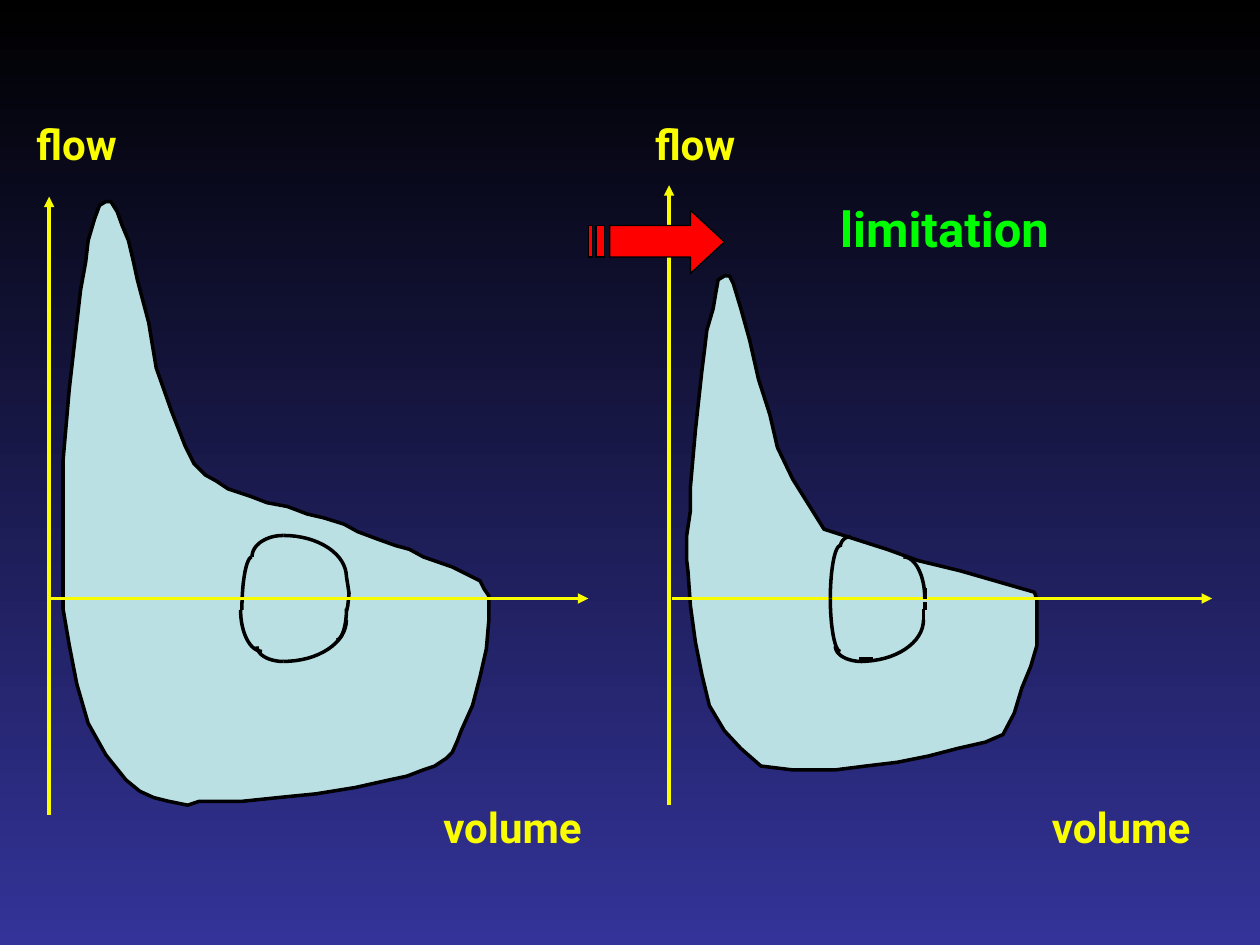
from math import cos, pi, sin

from lxml import etree
from pptx import Presentation
from pptx.dml.color import RGBColor
from pptx.enum.shapes import MSO_CONNECTOR
from pptx.enum.text import MSO_AUTO_SIZE
from pptx.oxml.ns import qn
from pptx.util import Inches, Pt

STRAIGHT = MSO_CONNECTOR.STRAIGHT
FIT_SHAPE = MSO_AUTO_SIZE.SHAPE_TO_FIT_TEXT
COLORS = {
    "sky_top": "000000",
    "sky_bottom": "333399",
    "axis": "FAFD00",
    "limitation": "00FF00",
    "loop": "BBE0E3",
    "outline": "000000",
    "arrow": "FF0000",
}
ARC_STEPS = 16

LIMITED_LOOP = [
    (5.46, 4.53), (5.45, 4.45), (5.45, 4.25), (5.48, 4.05), (5.48, 3.86),
    (5.52, 3.41), (5.57, 2.95), (5.59, 2.79), (5.61, 2.62), (5.66, 2.45),
    (5.68, 2.33), (5.7, 2.22), (5.75, 2.19), (5.79, 2.19), (5.82, 2.25),
    (5.88, 2.45), (5.95, 2.7), (6.02, 3.01), (6.11, 3.29), (6.17, 3.55),
    (6.29, 3.8), (6.54, 4.2), (6.79, 4.28), (7.04, 4.36), (7.29, 4.45),
    (7.62, 4.53), (8.21, 4.7), (8.23, 4.76), (8.23, 5.12), (8.18, 5.29),
    (8.11, 5.46), (8.05, 5.66), (7.96, 5.83), (7.82, 5.89), (7.6, 5.94),
    (7.37, 6), (7.12, 6.05), (6.87, 6.08), (6.63, 6.11), (6.29, 6.11),
    (6.04, 6.08), (5.88, 5.94), (5.75, 5.8), (5.63, 5.6), (5.57, 5.35),
    (5.52, 5.1), (5.48, 4.81), (5.46, 4.53),
]
NORMAL_LOOP = [
    (0.5, 4.67), (0.5, 3.66), (0.55, 3.09), (0.61, 2.56), (0.64, 2.3),
    (0.68, 2.08), (0.7, 1.91), (0.75, 1.74), (0.79, 1.63), (0.84, 1.6),
    (0.88, 1.6), (0.93, 1.68), (0.97, 1.79), (1.02, 1.91), (1.06, 2.08),
    (1.09, 2.22), (1.18, 2.56), (1.24, 2.92), (1.36, 3.26), (1.47, 3.54),
    (1.54, 3.68), (1.63, 3.77), (1.72, 3.82), (1.81, 3.88), (1.9, 3.91),
    (1.99, 3.94), (2.12, 3.99), (2.28, 4.02), (2.44, 4.08), (2.57, 4.11),
    (2.73, 4.16), (2.84, 4.22), (3, 4.28), (3.14, 4.33), (3.25, 4.36),
    (3.36, 4.42), (3.59, 4.5), (3.81, 4.61), (3.84, 4.67), (3.88, 4.73),
    (3.88, 4.92), (3.86, 5.15), (3.81, 5.37), (3.75, 5.6), (3.66, 5.8),
    (3.63, 5.88), (3.59, 5.97), (3.54, 6.02), (3.45, 6.08), (3.36, 6.11),
    (3.23, 6.16), (3.09, 6.19), (2.82, 6.25), (2.51, 6.3), (2.21, 6.33),
    (1.92, 6.36), (1.58, 6.36), (1.49, 6.39), (1.34, 6.36), (1.22, 6.33),
    (1.11, 6.28), (1, 6.19), (0.84, 5.99), (0.7, 5.74), (0.61, 5.43),
    (0.55, 5.12), (0.5, 4.83), (0.5, 4.67),
]
TIDAL_ARCS = [
    (7.17, 4.75, 0.17, -0.33), (6.75, 4.34, -0.08, -0.08),
    (6.67, 4.75, -0.08, 0.42), (6.83, 4.92, 0.5, 0.33),
    (6.67, 4.75, -0.08, -0.42), (6.84, 5.13, -0.21, 0.12),
    (2.25, 4.92, 0.5, 0.33), (2.25, 4.58, 0.5, -0.33),
    (2.25, 4.42, -0.25, -0.17), (2, 4.84, -0.08, -0.42),
    (2.08, 4.84, -0.17, 0.33), (2.25, 5.13, -0.21, 0.12),
    (2.67, 4.83, 0.08, 0.25),
]
TIDAL_LINES = [
    ((7.34, 4.78), (7.34, 4.84)),
    ((6.93, 5.23), (6.82, 5.23)),
    ((7.34, 4.67), (7.34, 4.75)),
    ((7.33, 4.83), (7.33, 4.92)),
]
TIDAL_EDGE = [(2.75, 4.58), (2.76, 4.64), (2.77, 4.71), (2.76, 4.81), (2.75, 4.85)]
ARROW_HEAD = [
    (5.48, 1.67), (5.48, 1.79), (4.84, 1.79), (4.84, 2.04),
    (5.48, 2.04), (5.48, 2.17), (5.75, 1.92),
]
ARROW_STRIPES = [
    [(left, 1.79), (left, 2.04), (right, 2.04), (right, 1.79)]
    for left, right in [(4.73, 4.8), (4.67, 4.7)]
]
LABELS = [
    ("flow", 0.19, 0.94, 0.88, 0.47, 24, "axis"),
    ("volume", 8.25, 6.36, 1.36, 0.47, 24, "axis"),
    ("volume", 3.42, 6.36, 1.36, 0.47, 24, "axis"),
    ("flow", 5.1, 0.94, 0.88, 0.47, 24, "axis"),
    ("limitation", 6.57, 1.58, 1.95, 0.53, 28, "limitation"),
]


def rgb(name):
    return RGBColor.from_string(COLORS[name])


def to_emu(points):
    return [(Inches(x), Inches(y)) for x, y in points]


def apply_format(target, values):
    for name, value in values.items():
        setattr(target, name, value)


class FlowVolumeSlide:
    font = "Roboto"
    line_width = 2

    def __init__(self, presentation):
        self.slide = presentation.slides.add_slide(presentation.slide_layouts[6])
        self.shapes = self.slide.shapes

    def background(self, *color_names):
        fill = self.slide.background.fill
        fill.gradient()
        fill.gradient_angle = 270
        for stop, position, name in zip(fill.gradient_stops, (0, 1), color_names):
            stop.position = position
            stop.color.rgb = rgb(name)

    def outline(self, contours, fill=None, closed=True, width=line_width):
        first, *others = map(to_emu, contours)
        builder = self.shapes.build_freeform(*first[0], scale=1.0)
        builder.add_line_segments(first[1:], close=closed)
        for contour in others:
            builder.move_to(*contour[0])
            builder.add_line_segments(contour[1:], close=closed)
        shape = builder.convert_to_shape()
        shape.shadow.inherit = False
        if fill:
            shape.fill.solid()
            shape.fill.fore_color.rgb = rgb(fill)
        else:
            shape.fill.background()
        shape.line.color.rgb = rgb("outline")
        shape.line.width = Pt(width)

    def quarter_arc(self, center_x, center_y, reach_x, reach_y):
        angles = [step * pi / 2 / ARC_STEPS for step in range(ARC_STEPS + 1)]
        points = [
            (center_x + reach_x * cos(angle), center_y + reach_y * sin(angle))
            for angle in angles
        ]
        self.outline([points], closed=False)

    def line(self, begin, end, color="outline", arrowhead=None):
        (begin_x, begin_y), (end_x, end_y) = to_emu([begin, end])
        connector = self.shapes.add_connector(STRAIGHT, begin_x, begin_y, end_x, end_y)
        connector.line.color.rgb = rgb(color)
        connector.line.width = Pt(self.line_width)
        properties = connector._element.spPr
        if arrowhead:
            line_element = properties.find(qn("a:ln"))
            etree.SubElement(line_element, qn(f"a:{arrowhead}"), type="triangle")
        etree.SubElement(properties, qn("a:effectLst"))

    def label(self, text, left, top, width, height, size, color):
        box = self.shapes.add_textbox(*map(Inches, (left, top, width, height)))
        apply_format(box.text_frame, {"word_wrap": False, "auto_size": FIT_SHAPE})
        paragraph = box.text_frame.paragraphs[0]
        paragraph.line_spacing = 0.9
        run = paragraph.add_run()
        run.text = text
        apply_format(run.font, {"name": self.font, "size": Pt(size), "bold": True})
        run.font.color.rgb = rgb(color)


def main():
    presentation = Presentation()
    presentation.slide_width = Inches(10)
    presentation.slide_height = Inches(7.5)
    page = FlowVolumeSlide(presentation)
    page.background("sky_top", "sky_bottom")
    page.outline([LIMITED_LOOP], fill="loop")
    page.line((5.31, 1.47), (5.31, 6.39), "axis", "headEnd")
    page.line((5.33, 4.75), (9.62, 4.75), "axis", "tailEnd")
    page.outline([NORMAL_LOOP], fill="loop")
    for label in LABELS:
        page.label(*label)
    page.line((0.39, 1.56), (0.39, 6.47), "axis", "headEnd")
    for begin, end in TIDAL_LINES:
        page.line(begin, end)
    for arc in TIDAL_ARCS:
        page.quarter_arc(*arc)
    page.outline([TIDAL_EDGE], closed=False)
    page.line((0.38, 4.75), (4.67, 4.75), "axis", "tailEnd")
    page.outline([ARROW_HEAD, *ARROW_STRIPES], fill="arrow", width=0.75)
    presentation.save("out.pptx")


if __name__ == "__main__":
    main()
